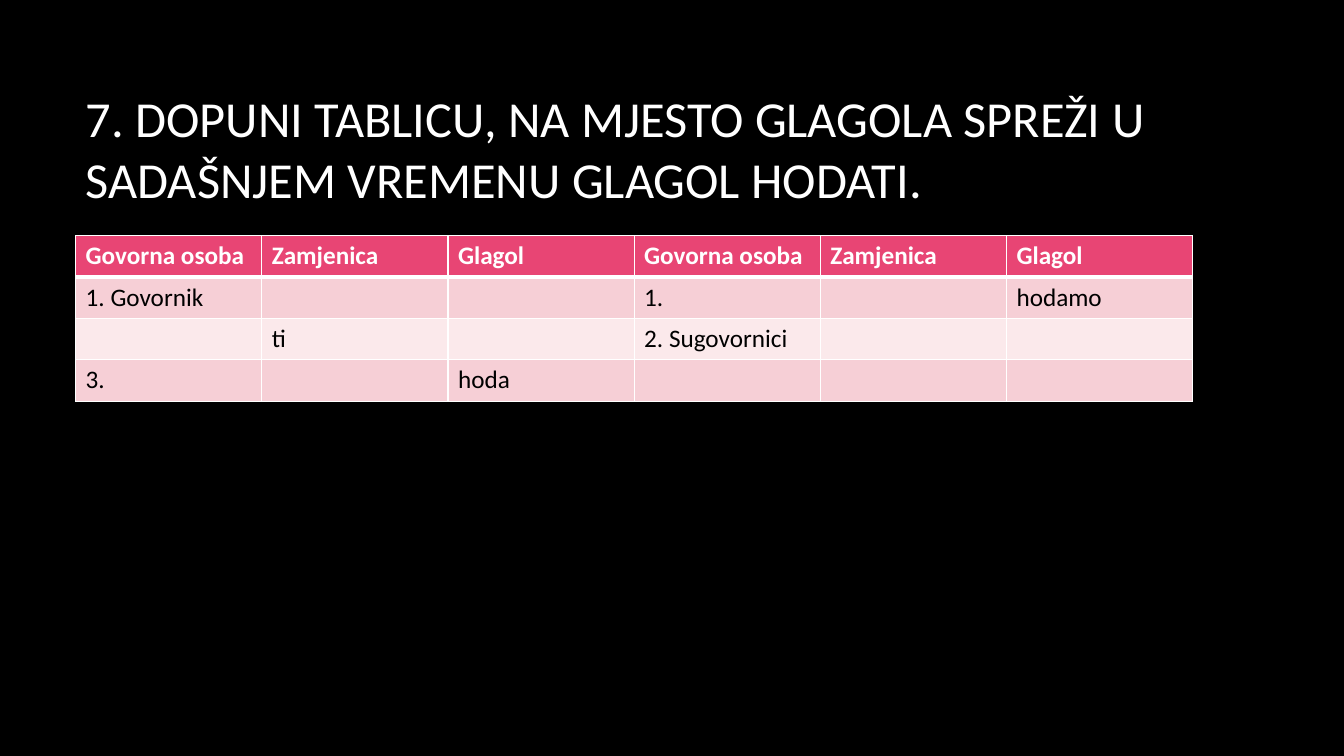
from dataclasses import dataclass

from lxml import etree
from pptx import Presentation
from pptx.dml.color import RGBColor
from pptx.enum.text import MSO_ANCHOR, MSO_AUTO_SIZE, PP_ALIGN
from pptx.oxml.ns import qn
from pptx.util import Inches, Pt

LEFT = PP_ALIGN.LEFT
MIDDLE = MSO_ANCHOR.MIDDLE
NO_FIT = MSO_AUTO_SIZE.NONE


@dataclass(frozen=True)
class Theme:
    font: str = "Calibri"
    background: str = "000000"
    light: str = "FFFFFF"
    dark: str = "000000"
    header: str = "E84574"
    bands: tuple = ("F6CFD6", "FBE9EB")
    title_size: int = 36
    table_size: int = 18
    thin: int = 1
    thick: int = 3


class SlideBuilder:
    def __init__(self, prs, theme):
        self.theme = theme
        self.s = prs.slides.add_slide(prs.slide_layouts[5])
        fill = self.s.background.fill
        fill.solid()
        fill.fore_color.rgb = RGBColor.from_string(theme.background)

    def add_text(self, p, text, size, color, bold=False):
        p.alignment = LEFT
        p.font.size = Pt(size)
        if text:
            r = p.add_run()
            r.text = text
            r.font.name = self.theme.font
            r.font.size = Pt(size)
            r.font.bold = bold
            r.font.color.rgb = RGBColor.from_string(color)

    def title(self, text, left, top, width, height):
        sp = self.s.shapes.title
        sp.left, sp.top = Inches(left), Inches(top)
        sp.width, sp.height = Inches(width), Inches(height)
        tf = sp.text_frame
        tf.word_wrap = True
        tf.auto_size = NO_FIT
        tf.vertical_anchor = MIDDLE
        self.add_text(tf.paragraphs[0], text, self.theme.title_size, self.theme.light)

    def borders(self, cell, widths):
        tc_pr = cell._tc.get_or_add_tcPr()
        for i, (side, width) in enumerate(widths.items()):
            ln = etree.Element(qn(f"a:{side}"), w=str(Pt(width)))
            fill = etree.SubElement(ln, qn("a:solidFill"))
            etree.SubElement(fill, qn("a:srgbClr"), val=self.theme.light)
            tc_pr.insert(i, ln)

    def table(self, rows, left, top, width, row_height):
        t = self.theme
        frame = self.s.shapes.add_table(
            len(rows), len(rows[0]), Inches(left), Inches(top),
            Inches(width), Inches(row_height * len(rows)))
        table = frame.table
        for i, texts in enumerate(rows):
            is_header = i == 0
            color = t.light if is_header else t.dark
            fill = t.header if is_header else t.bands[(i - 1) % len(t.bands)]
            widths = {"lnL": t.thin, "lnR": t.thin,
                      "lnT": t.thick if i == 1 else t.thin,
                      "lnB": t.thick if is_header else t.thin}
            for j, text in enumerate(texts):
                cell = table.cell(i, j)
                cell.fill.solid()
                cell.fill.fore_color.rgb = RGBColor.from_string(fill)
                self.borders(cell, widths)
                self.add_text(cell.text_frame.paragraphs[0], text,
                              t.table_size, color, is_header)


def main():
    prs = Presentation()
    prs.slide_width, prs.slide_height = Inches(13.33), Inches(7.5)
    slide = SlideBuilder(prs, Theme())
    left, width = 0.75, 11.08
    slide.title(
        "7. DOPUNI TABLICU, NA MJESTO GLAGOLA SPREŽI U "
        "SADAŠNJEM VREMENU GLAGOL HODATI.",
        left, 0.67, width, 1.59)
    rows = [
        ["Govorna osoba", "Zamjenica", "Glagol"] * 2,
        ["1. Govornik", "", "", "1.", "", "hodamo"],
        ["", "ti", "", "2. Sugovornici", "", ""],
        ["3.", "", "hoda", "", "", ""],
    ]
    slide.table(rows, left, 2.34, width, 0.41)
    prs.save("out.pptx")


if __name__ == "__main__":
    main()
